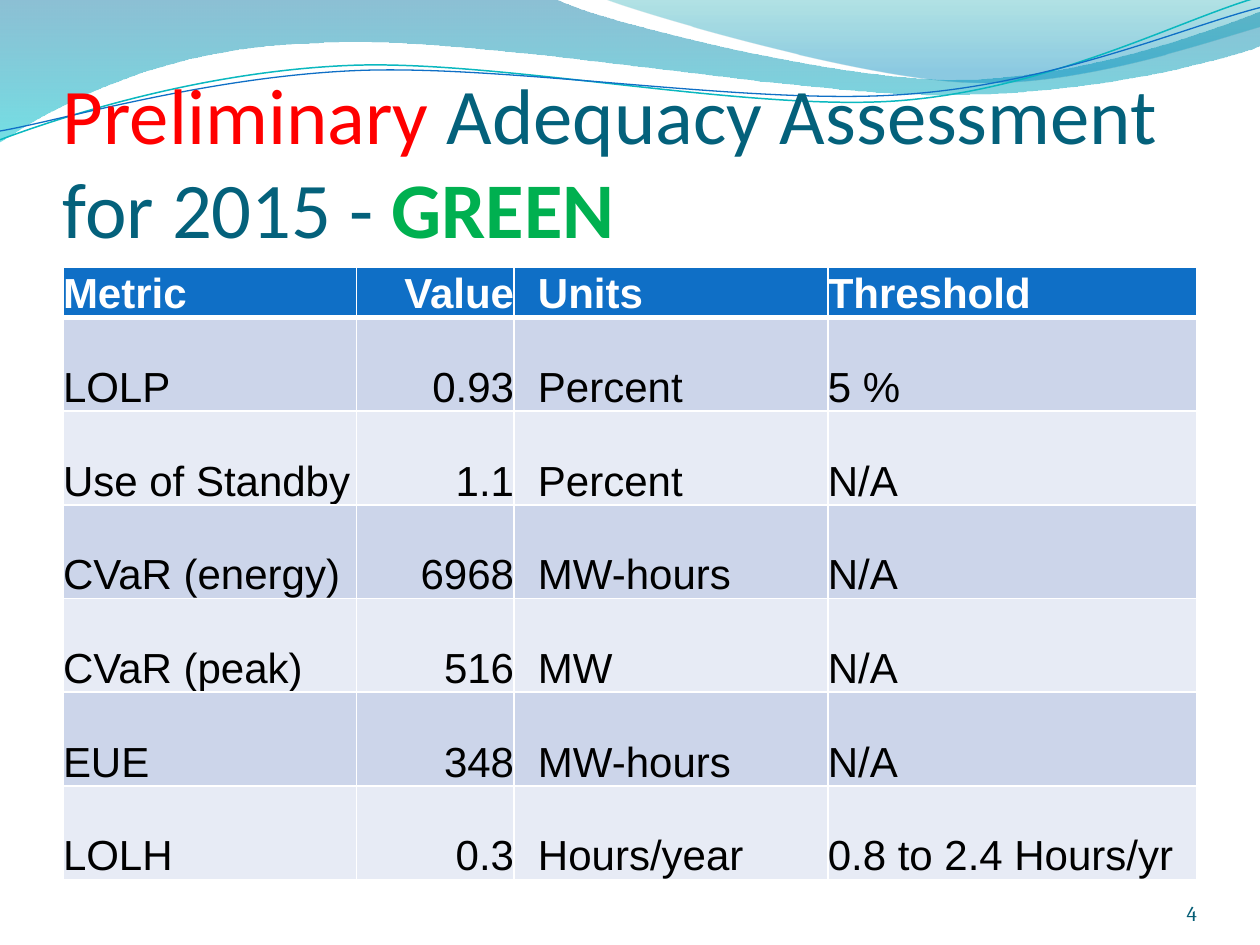
"""Builds the adequacy assessment slide on a grid of 10 columns by 7.5 rows."""
import math

import pptx
import pptx.dml.color
import pptx.enum.text
import pptx.oxml
import pptx.oxml.ns
import pptx.util

COLORS = {
    "title": "04617B", "alert": "FF0000", "good": "00B050", "number": "045D75",
    "header": "0F6FC6", "odd": "CCD5EA", "even": "E7EBF5",
    "white": "FFFFFF", "black": "000000",
    "deep": "0074A1", "aqua": "00C6CF", "teal": "00A1A9", "sky": "008BBF",
    "cyan_line": "0AB8BF", "blue_line": "0F6FC6",
}
NS = pptx.oxml.ns.nsdecls("a")
LEFT, WIDTH = 0.5, 9
COLUMNS = [2.33, 1.25, 2.49, 2.93]
TABLE_HEIGHT, HEADER_ROW = 4.86, 0.4
VALUE_COLUMN, UNITS_COLUMN = 1, 2
STROKE_TURN = 357.3
ROWS = [
    ("Metric", "Value", "Units", "Threshold"),
    ("LOLP", "0.93", "Percent", "5 %"),
    ("Use of Standby", "1.1", "Percent", "N/A"),
    ("CVaR (energy)", "6968", "MW-hours", "N/A"),
    ("CVaR (peak)", "516", "MW", "N/A"),
    ("EUE", "348", "MW-hours", "N/A"),
    ("LOLH", "0.3", "Hours/year", "0.8 to 2.4 Hours/yr"),
]
BANDS = [
    ((-0.01, -0.01, 10.02, 1.14),
     [(0, 0), (4.4, -0.01), (4.76, 0.17, 6.64, 0.63, 7.58, 0.63),
      (8.53, 0.63, 9.58, 0.26, 10, 0.09), (10.01, 0.36),
      (9.83, 0.44, 8.7, 0.76, 7.46, 0.75), (6.22, 0.75, 3.82, 0.28, 2.57, 0.34),
      (1.29, 0.36, 0.46, 0.83, -0.01, 1.13), (0, 0)],
     [(0, "deep", 45), (100, "aqua", 55)]),
    ((4.79, -0.01, 5.21, 0.7),
     [(4.79, -0.01), (5.09, 0.11, 6.82, 0.62, 7.69, 0.65),
      (8.56, 0.69, 9.61, 0.32, 10, 0.21), (10, 0), (4.79, -0.01)],
     [(0, "teal", 30), (80, "sky", 45)]),
]
STROKES = [
    ((-0.02, 0.22, 10.02, 0.71),
     [(0, 1.11), (0.48, 0.93, 1.58, 0.57, 2.77, 0.52),
      (3.95, 0.47, 5.93, 0.89, 7.13, 0.8), (8.33, 0.71, 9.38, 0.15, 9.98, -0.02)],
     "cyan_line", 0.85),
    ((-0.02, 0.3, 10.03, 0.58),
     [(0, 1.04), (0.47, 0.96, 1.64, 0.61, 2.83, 0.56),
      (4.03, 0.51, 5.97, 0.84, 7.17, 0.75), (8.36, 0.67, 9.41, 0.21, 10, 0.06)],
     "blue_line", 0.75),
]


def grid(n):
    """Return the length of n grid units."""
    return pptx.util.Inches(n)


def rgb(name):
    """Return a named colour."""
    return pptx.dml.color.RGBColor.from_string(COLORS[name])


def local_point(x, y, box, turn):
    """Return a slide point as an XML point inside a turned box."""
    left, top, width, height = box
    angle = math.radians(-turn)
    dx, dy = x - left - width / 2, y - top - height / 2
    px = dx * math.cos(angle) - dy * math.sin(angle) + width / 2
    py = dx * math.sin(angle) + dy * math.cos(angle) + height / 2
    return f'<a:pt x="{grid(px)}" y="{grid(py)}"/>'


def add_outline(s, box, path, close, turn=0):
    """Add a freeform of lines and cubic curves without fill or shadow."""
    ends = [(grid(part[-2]), grid(part[-1])) for part in path]
    builder = s.shapes.build_freeform(*ends[0])
    builder.add_line_segments(ends[1:], close=close)
    sp = builder.convert_to_shape()
    sp.left, sp.top, sp.width, sp.height = map(grid, box)
    sp.rotation = turn
    sp.shadow.inherit = False
    sp.fill.background()
    steps = ""
    for i, part in enumerate(path):
        tag = "moveTo" if i == 0 else "lnTo" if len(part) == 2 else "cubicBezTo"
        points = "".join(local_point(x, y, box, turn)
                         for x, y in zip(part[::2], part[1::2]))
        steps += f"<a:{tag}>{points}</a:{tag}>"
    steps += "<a:close/>" if close else ""
    old = sp.element.spPr.find(".//" + pptx.oxml.ns.qn("a:path"))
    old.getparent().replace(old, pptx.oxml.parse_xml(
        f'<a:path {NS} w="{sp.width}" h="{sp.height}">{steps}</a:path>'))
    return sp


def add_band(s, box, path, stops):
    """Add a wave filled with a translucent vertical gradient."""
    sp = add_outline(s, box, path, True)
    sp.line.fill.background()
    marks = "".join(
        f'<a:gs pos="{pos * 1000}"><a:srgbClr val="{COLORS[color]}">'
        f'<a:alpha val="{alpha * 1000}"/></a:srgbClr></a:gs>'
        for pos, color, alpha in stops)
    fill = pptx.oxml.parse_xml(
        f'<a:gradFill {NS} rotWithShape="1"><a:gsLst>{marks}</a:gsLst>'
        '<a:lin ang="5400000" scaled="0"/></a:gradFill>')
    old = sp.element.spPr.find(pptx.oxml.ns.qn("a:noFill"))
    old.getparent().replace(old, fill)


def add_stroke(s, box, path, color, width):
    """Add a thin curved line."""
    sp = add_outline(s, box, path, False, STROKE_TURN)
    sp.line.color.rgb = rgb(color)
    sp.line.width = pptx.util.Pt(width)


def add_text(s, box, runs, font, size, align):
    """Add a bottom-anchored text box of (text, colour, bold) runs."""
    tf = s.shapes.add_textbox(*map(grid, box)).text_frame
    tf.word_wrap = True
    tf.vertical_anchor = pptx.enum.text.MSO_ANCHOR.BOTTOM
    tf.margin_left = tf.margin_right = tf.margin_top = tf.margin_bottom = 0
    p = tf.paragraphs[0]
    p.alignment = align
    p.font.name, p.font.size = font, pptx.util.Pt(size)
    for text, color, bold in runs:
        r = p.add_run()
        r.text = text
        r.font.color.rgb = rgb(color)
        r.font.bold = bold


def add_borders(cell, bottom):
    """Give a cell white borders with its own bottom width."""
    for side, width in (("L", 1), ("R", 1), ("T", 1), ("B", bottom)):
        cell._tc.get_or_add_tcPr().append(pptx.oxml.parse_xml(
            f'<a:ln{side} {NS} w="{pptx.util.Pt(width)}"><a:solidFill>'
            f'<a:srgbClr val="{COLORS["white"]}"/></a:solidFill></a:ln{side}>'))


def fill_cell(cell, text, row, column):
    """Write and style one table cell."""
    header = row == 0
    cell.margin_left = grid(0.19 if column == UNITS_COLUMN else 0)
    cell.margin_right = cell.margin_top = cell.margin_bottom = 0
    cell.vertical_anchor = pptx.enum.text.MSO_ANCHOR.BOTTOM
    add_borders(cell, 3 if header else 1)
    cell.fill.solid()
    cell.fill.fore_color.rgb = rgb("header" if header else "odd" if row % 2 else "even")
    p = cell.text_frame.paragraphs[0]
    p.text = text
    align = pptx.enum.text.PP_ALIGN
    p.alignment = align.RIGHT if column == VALUE_COLUMN else align.LEFT
    p.font.name, p.font.size, p.font.bold = "Arial", pptx.util.Pt(24), header
    p.font.color.rgb = rgb("white" if header else "black")


def add_metrics(s):
    """Add the table of adequacy metrics."""
    body = len(ROWS) - 1
    heights = [HEADER_ROW] + [(TABLE_HEIGHT - HEADER_ROW) / body] * body
    box = (LEFT, 2.12, WIDTH, TABLE_HEIGHT)
    table = s.shapes.add_table(len(ROWS), len(COLUMNS), *map(grid, box)).table
    table.horz_banding = False
    for column, width in zip(table.columns, COLUMNS):
        column.width = grid(width)
    for i, (values, height) in enumerate(zip(ROWS, heights)):
        table.rows[i].height = grid(height)
        for j, text in enumerate(values):
            fill_cell(table.cell(i, j), text, i, j)


def main():
    """Build and save the slide."""
    prs = pptx.Presentation()
    prs.slide_width, prs.slide_height = grid(10), grid(7.5)
    s = prs.slides.add_slide(prs.slide_layouts[6])
    for band in BANDS:
        add_band(s, *band)
    for stroke in STROKES:
        add_stroke(s, *stroke)
    align = pptx.enum.text.PP_ALIGN
    title = [("Preliminary", "alert", False),
             (" Adequacy Assessment for 2015 - ", "title", False),
             ("GREEN", "good", True)]
    add_text(s, (LEFT, 0.77, WIDTH, 1.25), title, "Calibri", 45, align.LEFT)
    add_metrics(s)
    add_text(s, (8.67, 6.95, 0.83, 0.4), [("4", "number", False)], "Cambria", 12, align.RIGHT)
    prs.save("out.pptx")


if __name__ == "__main__":
    main()
